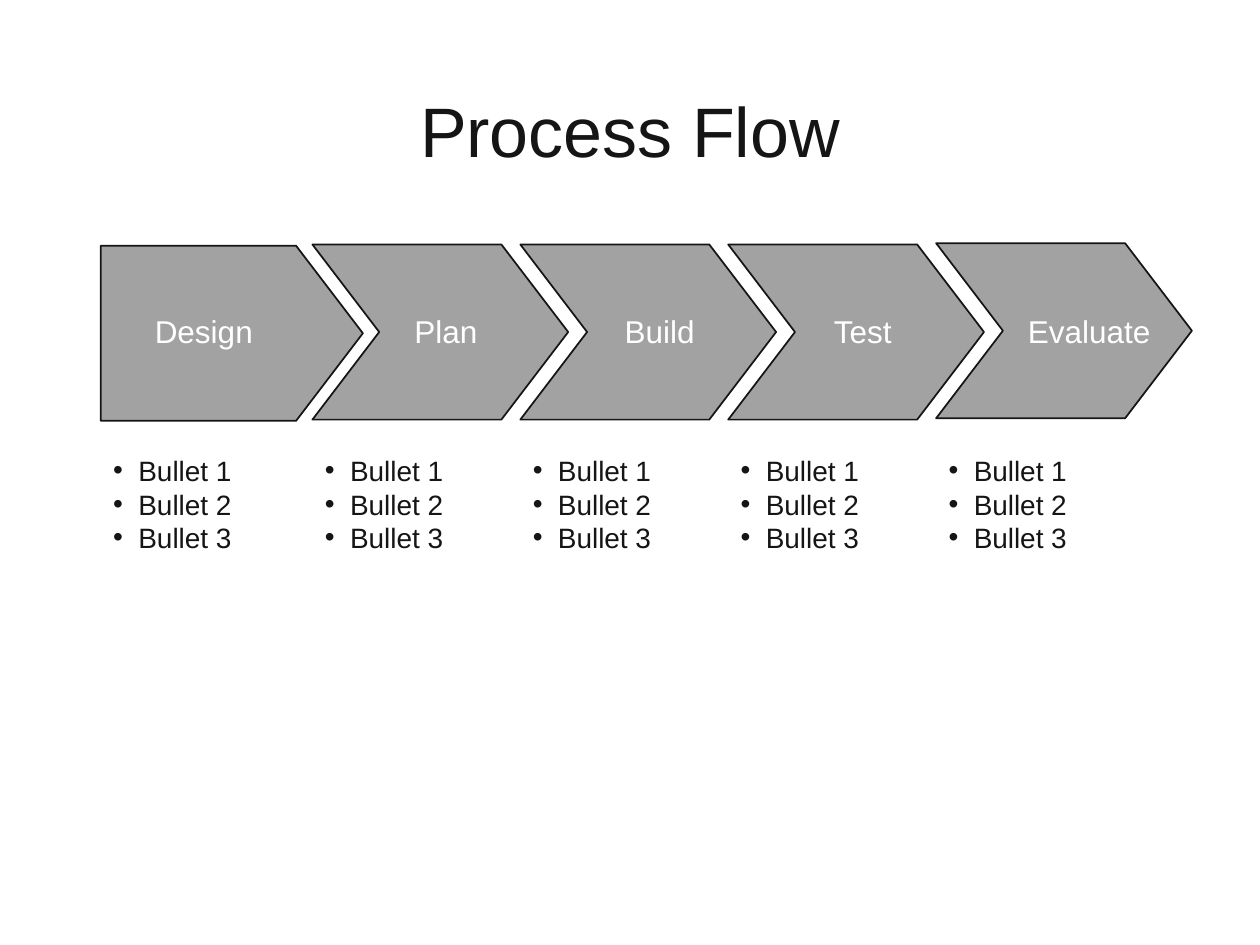
from lxml import etree
from pptx import Presentation
from pptx.dml.color import RGBColor
from pptx.enum.text import MSO_ANCHOR, MSO_AUTO_SIZE, PP_ALIGN
from pptx.oxml.ns import qn
from pptx.util import Inches, Pt

CENTER = PP_ALIGN.CENTER
MIDDLE = MSO_ANCHOR.MIDDLE
GROW = MSO_AUTO_SIZE.SHAPE_TO_FIT_TEXT
FONT = "Arial"
INK, GRAY, WHITE = "151515", "A2A2A2", "FFFFFF"
FIRST_LEFT, SECOND_LEFT, STEP = 0.8, 2.48, 1.65
HEIGHT, POINT = 1.39, 0.53
BULLETS = ["Bullet 1", "Bullet 2", "Bullet 3"]
# name, arrow top, label left, label width
STAGES = [
    ("Design", 1.95, 1.13, 0.98),
    ("Plan", 1.94, 3.19, 0.7),
    ("Build", 1.94, 4.86, 0.76),
    ("Test", 1.94, 6.52, 0.69),
    ("Evaluate", 1.93, 8.06, 1.17),
]


def color(value):
    """Turn a hex string into a colour."""
    return RGBColor.from_string(value)


def add_box(s, left, top, width, height, wrap=True):
    """Add an empty text box and return its text frame."""
    tf = s.shapes.add_textbox(
        Inches(left), Inches(top), Inches(width), Inches(height)).text_frame
    tf.word_wrap = wrap
    return tf


def add_run(p, text, size, fill):
    """Add one formatted run to a paragraph."""
    r = p.add_run()
    r.text = text
    r.font.name = FONT
    r.font.size = Pt(size)
    r.font.color.rgb = color(fill)


def add_title(s, text):
    """Add the centred slide title."""
    tf = add_box(s, 0.5, 0.4, 9, 1.25)
    tf.vertical_anchor = MIDDLE
    p = tf.paragraphs[0]
    p.alignment = CENTER
    add_run(p, text, 40, INK)


def add_bullets(s, left, items):
    """Add the bullet list below a stage."""
    tf = add_box(s, left, 3.55, 1.51, 2.57)
    for i, item in enumerate(items):
        p = tf.add_paragraph() if i else tf.paragraphs[0]
        pPr = p._p.get_or_add_pPr()
        pPr.set("marL", str(Inches(0.2)))
        pPr.set("indent", str(Inches(-0.2)))
        etree.SubElement(pPr, qn("a:buFont")).set("typeface", FONT)
        etree.SubElement(pPr, qn("a:buChar")).set("char", "•")
        add_run(p, item, 16, INK)


def add_arrow(s, left, top, body, notch):
    """Add a stage arrow whose back edge is cut in by the notch."""
    middle, bottom, shoulder = top + HEIGHT / 2, top + HEIGHT, left + body
    points = [(shoulder, top), (shoulder + POINT, middle),
              (shoulder, bottom), (left, bottom)]
    if notch:
        points.append((left + notch, middle))
    builder = s.shapes.build_freeform(Inches(left), Inches(top))
    builder.add_line_segments([(Inches(x), Inches(y)) for x, y in points])
    sp = builder.convert_to_shape()
    sp.shadow.inherit = False
    sp.fill.solid()
    sp.fill.fore_color.rgb = color(GRAY)
    sp.line.color.rgb = color(INK)
    sp.line.width = Pt(1)


def add_label(s, text, left, width):
    """Add the name of a stage over its arrow."""
    tf = add_box(s, left, 2.43, width, 0.4, wrap=False)
    tf.auto_size = GROW
    add_run(tf.paragraphs[0], text, 18, WHITE)


def main():
    """Build the process flow slide."""
    prs = Presentation()
    prs.slide_width, prs.slide_height = Inches(10), Inches(7.5)
    s = prs.slides.add_slide(prs.slide_layouts[6])
    add_title(s, "Process Flow")
    lefts = [FIRST_LEFT] + [SECOND_LEFT + STEP * i for i in range(len(STAGES) - 1)]
    for left in lefts:
        add_bullets(s, left, BULLETS)
    for i, (left, stage) in enumerate(zip(lefts, STAGES)):
        add_arrow(s, left, stage[1], 1.5 if i else 1.55, POINT if i else 0)
    for name, _, left, width in STAGES:
        add_label(s, name, left, width)
    prs.save("out.pptx")


if __name__ == "__main__":
    main()
